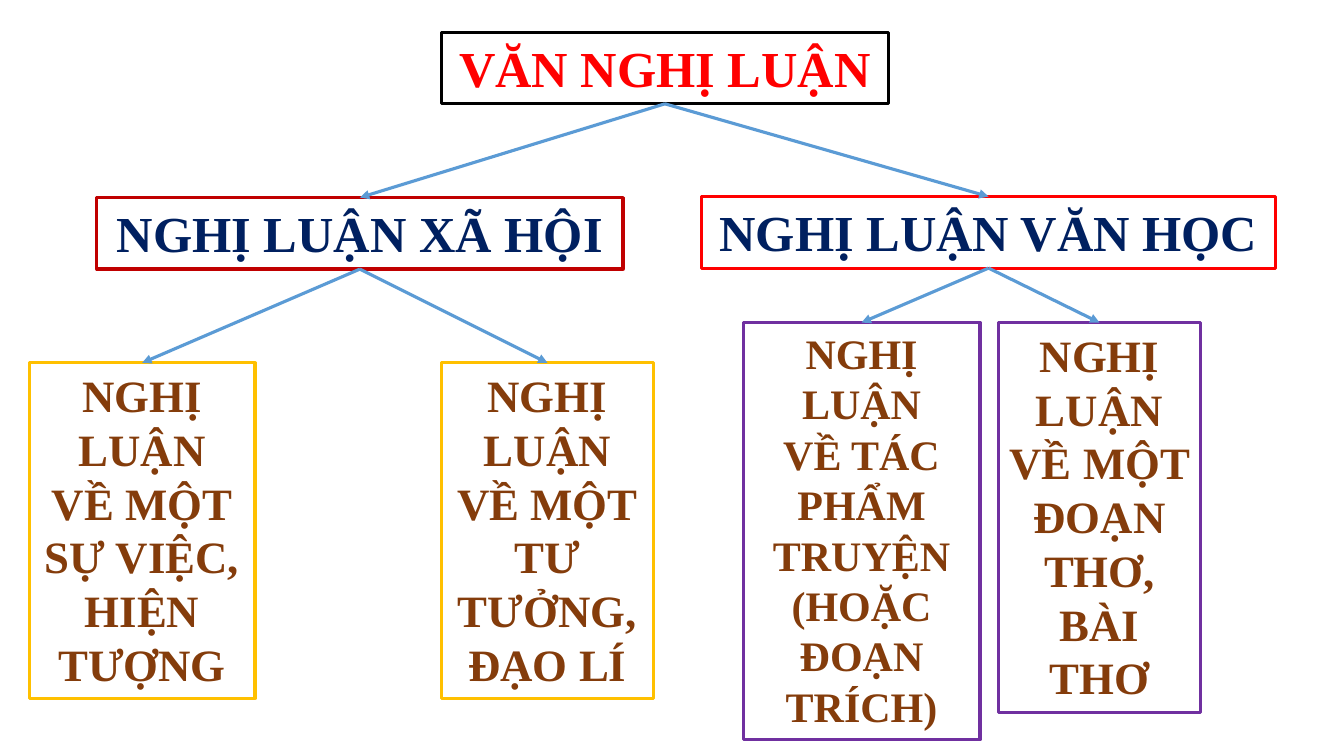
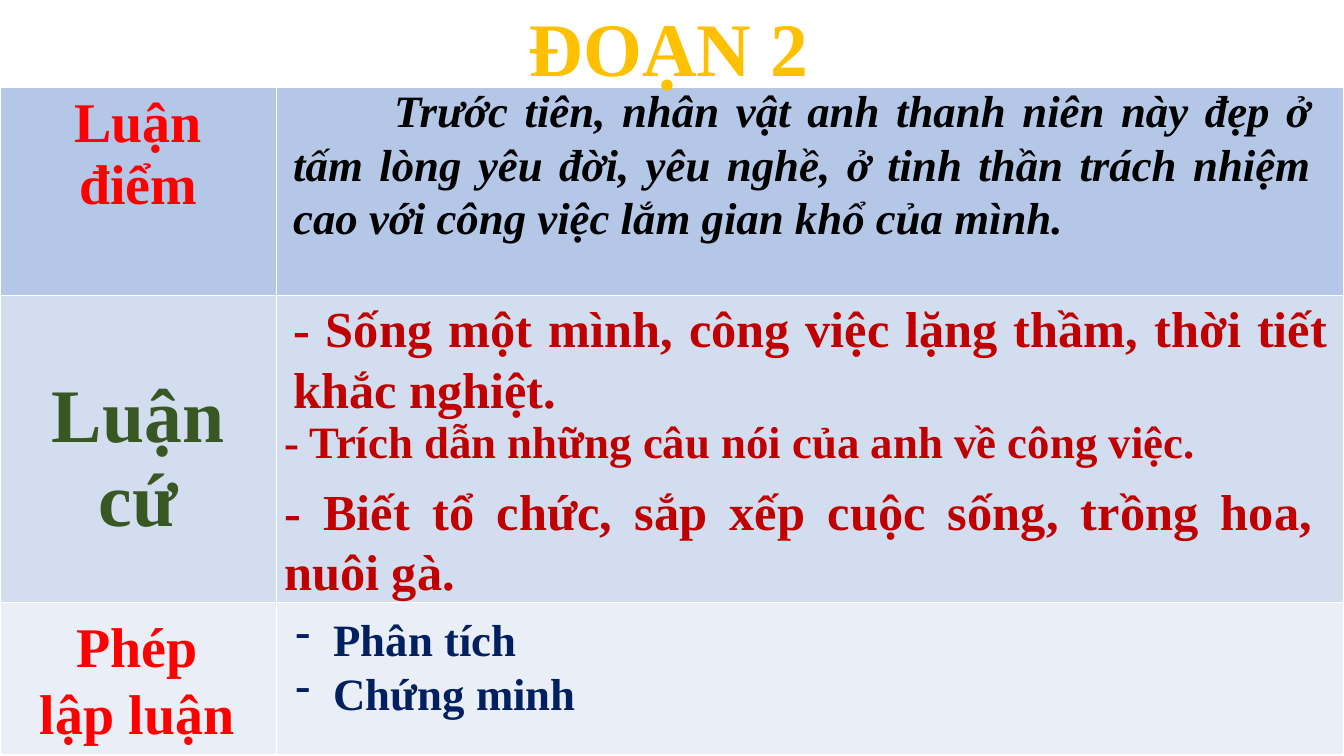
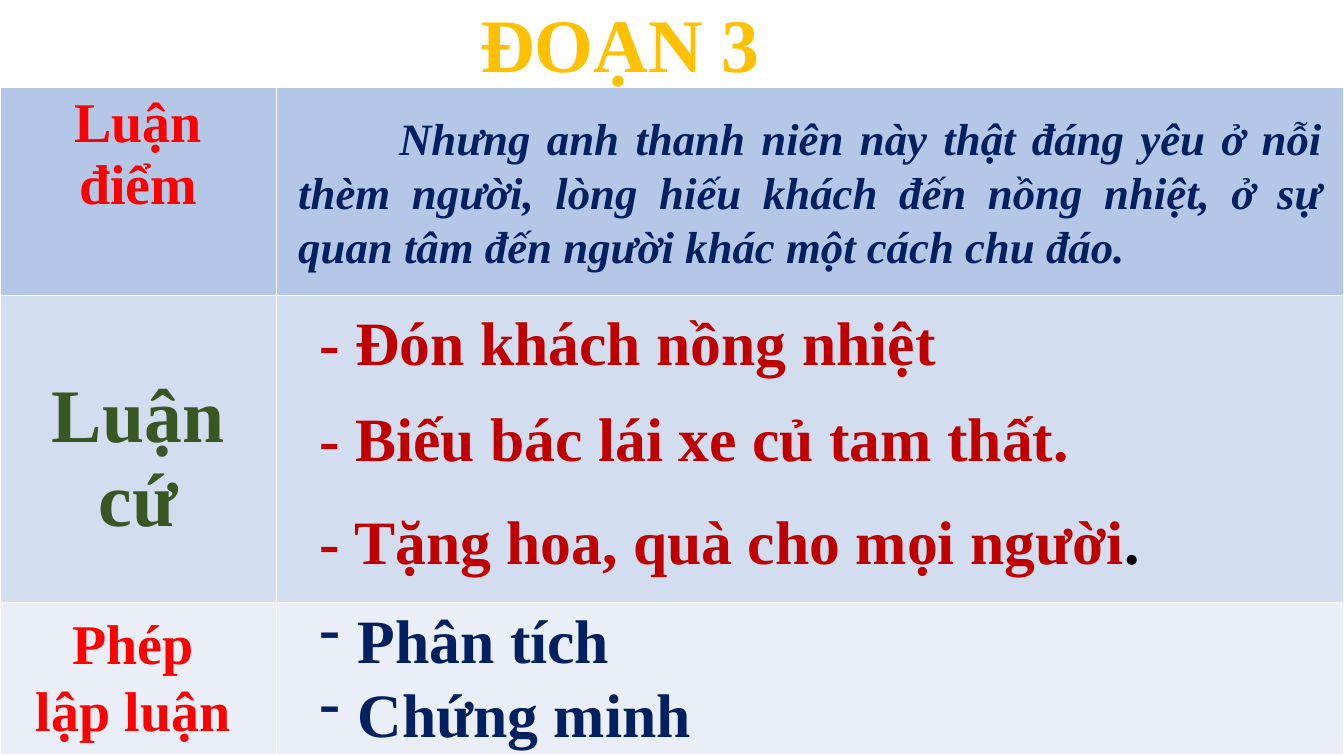
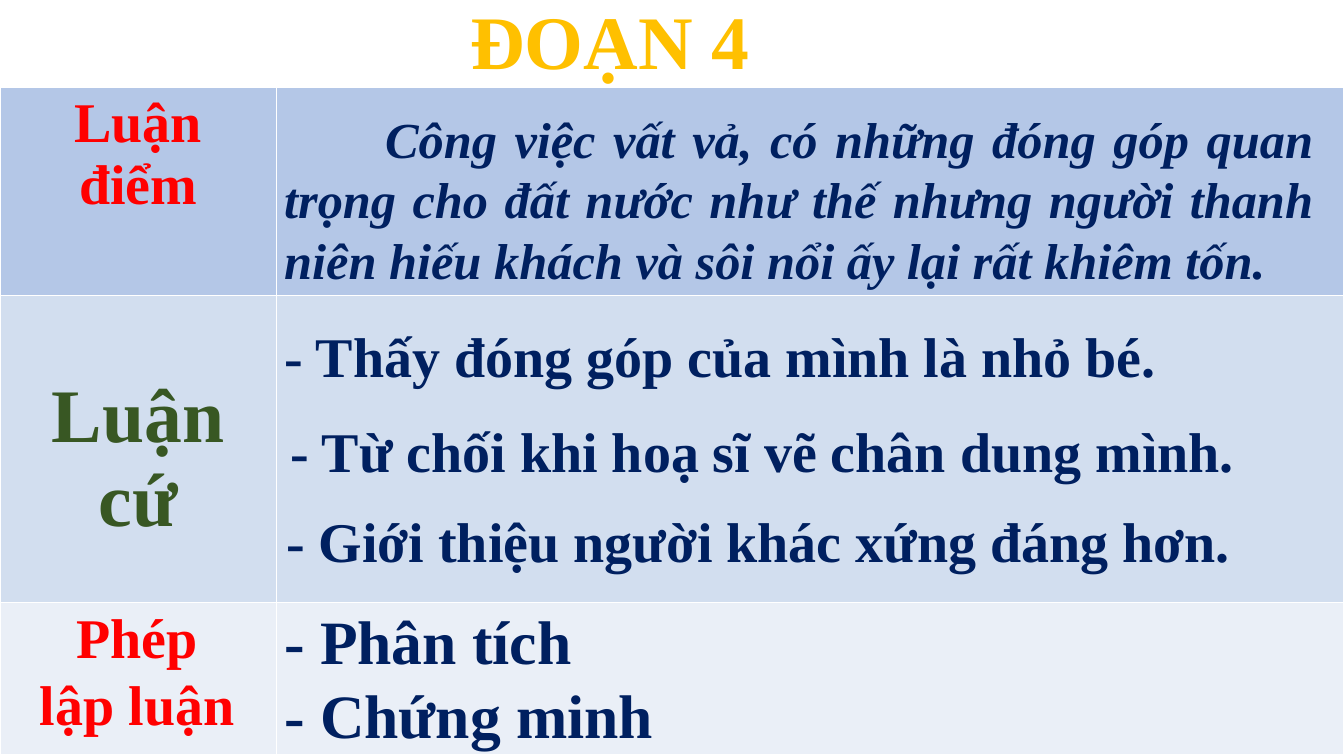
from lxml import etree
from pptx import Presentation
from pptx.dml.color import RGBColor
from pptx.enum import shapes, text
from pptx.oxml import parse_xml
from pptx.oxml.ns import nsdecls, qn
from pptx.util import Inches, Pt

# Shared style
FONT = "Times New Roman"
BLACK = RGBColor(0x00, 0x00, 0x00)
RED = RGBColor(0xFF, 0x00, 0x00)
DARK_RED = RGBColor(0xC0, 0x00, 0x00)
NAVY = RGBColor(0x00, 0x20, 0x60)
GOLD = RGBColor(0xFF, 0xC0, 0x00)
BROWN = RGBColor(0x84, 0x3C, 0x0B)
PURPLE = RGBColor(0x70, 0x30, 0xA0)
GREEN = RGBColor(0x38, 0x57, 0x23)
BLUE = RGBColor(0x5B, 0x9B, 0xD5)
ROW_FILLS = [RGBColor(0xB4, 0xC7, 0xE7), RGBColor(0xD2, 0xDE, 0xEF),
             RGBColor(0xEA, 0xEF, 0xF7)]
COLUMNS = [2.74, 10.59]
ROWS = [2.06, 3.05, 1.51]
TOP, BOTTOM = 0, 2  # connection sites of a rectangle

CENTER = text.PP_ALIGN.CENTER
JUSTIFY = text.PP_ALIGN.JUSTIFY

HEADING_OUTLINE = (
    f'<a:ln {nsdecls("a")} w="9000"><a:solidFill><a:srgbClr val="BD8E00"/>'
    '</a:solidFill></a:ln>')
HEADING_GRADIENT = (
    f'<a:gradFill {nsdecls("a")}><a:gsLst>'
    + "".join(f'<a:gs pos="{pos}000"><a:srgbClr val="{rgb}"/></a:gs>'
              for pos, rgb in [(0, "7F5F00"), (43, "FFC000"),
                               (48, "EEB300"), (100, "7F5F00")])
    + '</a:gsLst><a:lin ang="5400000"/></a:gradFill>')


def write(tf, paragraphs, size, color, align=None, italic=False,
          first_line=0, bullet=None):
    """Fill a text frame; a paragraph is a string or a list of (text, colour)."""
    tf.word_wrap = True
    for i, content in enumerate(paragraphs):
        p = tf.paragraphs[0] if i == 0 else tf.add_paragraph()
        p.alignment = align
        pPr = p._p.get_or_add_pPr()
        if first_line:
            pPr.set("indent", str(Inches(first_line)))
        if bullet:
            pPr.set("marL", str(Inches(0.38)))
            pPr.set("indent", str(-Inches(0.38)))
            etree.SubElement(pPr, qn("a:buChar")).set("char", bullet)
        runs = [(content, color)] if isinstance(content, str) else content
        for words, run_color in runs:
            r = p.add_run()
            r.text = words
            r.font.name = FONT
            r.font.size = Pt(size)
            r.font.bold = True
            r.font.italic = italic
            r.font.color.rgb = run_color


class Deck:
    def __init__(self):
        self.prs = Presentation()
        self.prs.slide_width = Inches(13.33)
        self.prs.slide_height = Inches(7.5)
        self.s = None

    def new_slide(self):
        self.s = self.prs.slides.add_slide(self.prs.slide_layouts[5])

    def frame(self, sp, paragraphs, line=None, **style):
        tf = sp.text_frame
        tf.auto_size = text.MSO_AUTO_SIZE.NONE
        tf.vertical_anchor = text.MSO_ANCHOR.TOP
        write(tf, paragraphs, **style)
        if line is not None:
            sp.line.color.rgb = line
            sp.line.width = Pt(2.25)
        return sp

    def title(self, words, x, y, w, h, **style):
        sp = self.s.shapes.title
        sp.left, sp.top, sp.width, sp.height = map(Inches, (x, y, w, h))
        return self.frame(sp, [words], align=CENTER, **style)

    def box(self, x, y, w, h, *paragraphs, **style):
        sp = self.s.shapes.add_textbox(*map(Inches, (x, y, w, h)))
        return self.frame(sp, paragraphs, **style)

    def arrow(self, parent, child):
        c = self.s.shapes.add_connector(shapes.MSO_CONNECTOR.STRAIGHT, 0, 0, 0, 0)
        c.begin_connect(parent, BOTTOM)
        c.end_connect(child, TOP)
        c.line.color.rgb = BLUE
        c.line.width = Pt(2.25)
        etree.SubElement(c.line._get_or_add_ln(), qn("a:tailEnd")).set("type", "triangle")
        etree.SubElement(c._element.spPr, qn("a:effectLst"))

    def heading(self, words, x, y):
        """Gold gradient title, in front of the table's upper edge."""
        sp = self.title(words, x, y, 3.08, 1.01, size=54, color=GOLD)
        rPr = sp.text_frame.paragraphs[0].runs[0]._r.rPr
        rPr.remove(rPr.find(qn("a:solidFill")))
        rPr.insert(0, parse_xml(HEADING_OUTLINE))
        rPr.insert(1, parse_xml(HEADING_GRADIENT))
        tree = sp._element.getparent()
        tree.append(sp._element)

    def table(self):
        tbl = self.s.shapes.add_table(
            len(ROWS), len(COLUMNS), 0, Inches(0.87),
            Inches(sum(COLUMNS)), Inches(sum(ROWS))).table
        for column, width in zip(tbl.columns, COLUMNS):
            column.width = Inches(width)
        for row, height, fill in zip(tbl.rows, ROWS, ROW_FILLS):
            row.height = Inches(height)
            for cell in row.cells:
                cell.fill.solid()
                cell.fill.fore_color.rgb = fill
        write(tbl.cell(0, 0).text_frame, ["Luận điểm"], 40, RED, CENTER)
        evidence = tbl.cell(1, 0)
        evidence.margin_top = Inches(0.79)
        write(evidence.text_frame, ["Luận cứ"], 54, GREEN, CENTER)

    def passage(self, heading, heading_at, method_label):
        """Slide frame shared by the paragraph analyses."""
        self.new_slide()
        self.table()
        self.heading(heading, *heading_at)
        self.box(*method_label, 1.45, "Phép lập luận", size=40, color=RED, align=CENTER)

    def thesis(self, x, y, w, h, words, size, color):
        self.box(x, y, w, h, words, size=size, color=color, align=JUSTIFY,
                 italic=True, first_line=1)


def overview(d):
    d.new_slide()
    root = d.title("VĂN NGHỊ LUẬN", 4.38, 0.32, 4.43, 0.71,
                   size=36, color=RED, line=BLACK)
    # Branches, each with its leaves
    branches = [
        ((0.96, 1.96, 5.22, 0.71), "NGHỊ LUẬN XÃ HỘI", DARK_RED, GOLD, [
            ((0.29, 3.6, 2.24, 3.33), 32, ["VỀ MỘT", "SỰ VIỆC, HIỆN TƯỢNG"]),
            ((4.38, 3.6, 2.1, 3.33), 32, ["VỀ MỘT", "TƯ TƯỞNG, ĐẠO LÍ"])]),
        ((6.96, 1.95, 5.69, 0.71), "NGHỊ LUẬN VĂN HỌC", RED, PURPLE, [
            ((7.37, 3.2, 2.35, 4.14), 30, ["VỀ TÁC PHẨM TRUYỆN (HOẶC ĐOẠN TRÍCH)"]),
            ((9.9, 3.2, 2.01, 3.87), 32, ["VỀ MỘT ĐOẠN THƠ, BÀI THƠ"])]),
    ]
    for at, name, line, leaf_line, leaves in branches:
        branch = d.box(*at, name, size=36, color=NAVY, align=CENTER, line=line)
        d.arrow(root, branch)
        for leaf_at, size, words in leaves:
            leaf = d.box(*leaf_at, "NGHỊ LUẬN", *words, size=size, color=BROWN,
                         align=CENTER, line=leaf_line)
            d.arrow(branch, leaf)


def passage_2(d):
    d.passage("ĐOẠN 2", (5.09, -0.04), (0.29, 6.02, 2.14))
    d.thesis(2.81, 0.77, 10.3, 1.72,
             "Trước tiên, nhân vật anh thanh niên này đẹp ở tấm lòng yêu đời, "
             "yêu nghề, ở tinh thần trách nhiệm cao với công việc lắm gian khổ "
             "của mình.", 32, BLACK)
    d.box(2.81, 2.9, 10.46, 1.31,
          "- Sống một mình, công việc lặng thầm, thời tiết khắc nghiệt.",
          size=36, color=DARK_RED, align=JUSTIFY)
    d.box(2.72, 4.06, 10.4, 0.64, "- Trích dẫn những câu nói của anh về công việc.",
          size=32, color=DARK_RED)
    d.box(2.72, 4.71, 10.4, 1.31,
          "- Biết tổ chức, sắp xếp cuộc sống, trồng hoa, nuôi gà.",
          size=36, color=DARK_RED, align=JUSTIFY)
    d.box(2.83, 6.02, 3.28, 1.18, "Phân tích", "Chứng minh",
          size=32, color=NAVY, bullet="-")


def passage_3(d):
    d.passage("ĐOẠN 3", (4.61, -0.08), (0.23, 5.99, 2.18))
    d.thesis(2.86, 1.05, 10.36, 1.72,
             "Nhưng anh thanh niên này thật đáng yêu ở nỗi thèm người, lòng hiếu "
             "khách đến nồng nhiệt, ở sự quan tâm đến người khác một cách chu đáo.",
             32, NAVY)
    evidence = [
        (2.97, 7.08, "- Đón khách nồng nhiệt"),
        (3.92, 7.88, "- Biếu bác lái xe củ tam thất."),
        (4.94, 8.97, [("- Tặng hoa, quà cho mọi người", DARK_RED), (".", BLACK)]),
    ]
    for y, w, words in evidence:
        d.box(3.07, y, w, 0.84, words, size=44, color=DARK_RED)
    d.box(3.07, 5.92, 5.04, 1.58, "Phân tích", "Chứng minh",
          size=44, color=NAVY, bullet="-")


def passage_4(d):
    d.passage("ĐOẠN 4", (4.51, -0.11), (0.26, 5.93, 2.2))
    d.thesis(2.72, 1.02, 10.41, 1.92,
             "Công việc vất vả, có những đóng góp quan trọng cho đất nước như thế "
             "nhưng người thanh niên hiếu khách và sôi nổi ấy lại rất khiêm tốn.",
             36, NAVY)
    evidence = [
        (2.72, 3.14, 9.17, "- Thấy đóng góp của mình là nhỏ bé."),
        (2.78, 4.08, 9.99, "- Từ chối khi hoạ sĩ vẽ chân dung mình."),
        (2.74, 4.98, 9.92, "- Giới thiệu người khác xứng đáng hơn."),
    ]
    for x, y, w, words in evidence:
        d.box(x, y, w, 0.77, words, size=40, color=NAVY)
    d.box(2.72, 5.93, 4.31, 1.58, "- Phân tích", "- Chứng minh", size=44, color=NAVY)


def main():
    d = Deck()
    for build in (overview, passage_2, passage_3, passage_4):
        build(d)
    d.prs.save("out.pptx")


if __name__ == "__main__":
    main()
